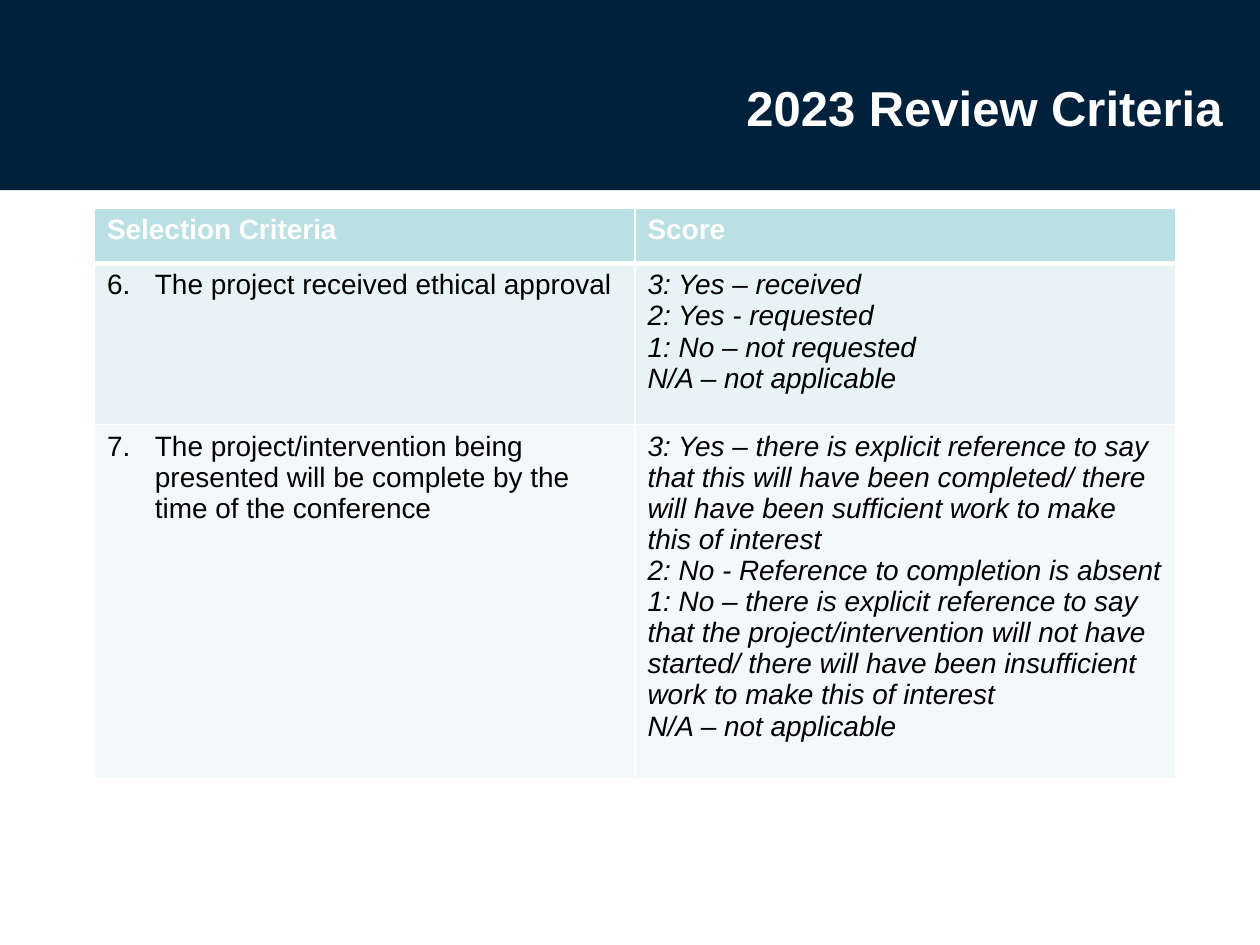
from dataclasses import dataclass

from lxml.etree import SubElement
from pptx import Presentation
from pptx.dml.color import RGBColor
from pptx.enum.shapes import MSO_SHAPE
from pptx.enum.text import MSO_ANCHOR, PP_ALIGN
from pptx.oxml.ns import qn
from pptx.util import Inches, Pt


@dataclass(frozen=True)
class Theme:
    font: str = "Arial"
    navy: str = "00213B"
    white: str = "FFFFFF"
    black: str = "000000"
    header_fill: str = "BBE0E3"
    row_fills: tuple = ("E7F3F4", "F3F9FA")
    title_size: int = 28
    table_size: int = 16
    border_width: int = 1
    header_border_width: int = 3


THEME = Theme()
HEADERS = ("Selection Criteria", "Score")
FIRST_NUMBER = 6
ROW_HEIGHTS = (0.44, 1.28, 2.81)
CRITERIA = (
    (
        "The project received ethical approval",
        (
            "3: Yes – received",
            "2: Yes - requested",
            "1: No – not requested",
            "N/A – not applicable",
        ),
    ),
    (
        "The project/intervention being presented will be complete by the "
        "time of the conference",
        (
            "3: Yes – there is explicit reference to say that this will have been "
            "completed/ there will have been sufficient work to make this of interest",
            "2: No - Reference to completion is absent",
            "1: No – there is explicit reference to say that the project/intervention "
            "will not have started/ there will have been insufficient work to make "
            "this of interest",
            "N/A – not applicable",
        ),
    ),
)


def add_run(paragraph, text, size, color, bold=False, italic=False):
    run = paragraph.add_run()
    run.text = text
    run.font.name = THEME.font
    run.font.size = Pt(size)
    run.font.bold = bold
    run.font.italic = italic
    run.font.color.rgb = RGBColor.from_string(color)


def add_banner(slide, width):
    banner = slide.shapes.add_shape(MSO_SHAPE.RECTANGLE, 0, 0, width, Inches(1.51))
    banner.shadow.inherit = False
    banner.fill.solid()
    banner.fill.fore_color.rgb = RGBColor.from_string(THEME.navy)
    banner.line.fill.background()


def add_title(slide, text):
    box = slide.shapes.add_textbox(Inches(1.3), Inches(0.04), Inches(8.5), Inches(1.61))
    frame = box.text_frame
    frame.word_wrap = True
    frame.vertical_anchor = MSO_ANCHOR.MIDDLE
    paragraph = frame.paragraphs[0]
    paragraph.alignment = PP_ALIGN.RIGHT
    add_run(paragraph, text, THEME.title_size, THEME.white, bold=True)


def add_border(cell, side, width):
    properties = cell._tc.get_or_add_tcPr()
    line = SubElement(properties, qn(f"a:ln{side}"), w=str(Pt(width)))
    fill = SubElement(line, qn("a:solidFill"))
    SubElement(fill, qn("a:srgbClr"), val=THEME.white)


def style_cell(cell, fill, top=THEME.border_width, bottom=THEME.border_width):
    widths = {"L": THEME.border_width, "R": THEME.border_width, "T": top, "B": bottom}
    for side, width in widths.items():
        add_border(cell, side, width)
    cell.fill.solid()
    cell.fill.fore_color.rgb = RGBColor.from_string(fill)


def number_paragraph(paragraph, number):
    properties = paragraph._p.get_or_add_pPr()
    indent = Inches(0.38)
    properties.set("marL", str(indent))
    properties.set("indent", str(-indent))
    SubElement(properties, qn("a:buFont"), typeface=THEME.font)
    SubElement(properties, qn("a:buAutoNum"), type="arabicPeriod", startAt=str(number))


def fill_header(cell, text):
    style_cell(cell, THEME.header_fill, bottom=THEME.header_border_width)
    paragraph = cell.text_frame.paragraphs[0]
    add_run(paragraph, text, THEME.table_size, THEME.white, bold=True)


def fill_criterion(cell, text, number):
    paragraph = cell.text_frame.paragraphs[0]
    number_paragraph(paragraph, number)
    add_run(paragraph, text, THEME.table_size, THEME.black)


def fill_scores(cell, scores):
    frame = cell.text_frame
    for index, score in enumerate(scores):
        paragraph = frame.add_paragraph() if index else frame.paragraphs[0]
        add_run(paragraph, score, THEME.table_size, THEME.black, italic=True)


def add_criteria_table(slide):
    table = slide.shapes.add_table(
        len(ROW_HEIGHTS), len(HEADERS),
        Inches(0.75), Inches(1.65), Inches(8.58), Inches(sum(ROW_HEIGHTS)),
    ).table
    table.horz_banding = False
    for row, height in zip(table.rows, ROW_HEIGHTS):
        row.height = Inches(height)
    for column, header in enumerate(HEADERS):
        fill_header(table.cell(0, column), header)
    for index, (criterion, scores) in enumerate(CRITERIA):
        row = index + 1
        top = THEME.border_width if index else THEME.header_border_width
        for column in range(len(HEADERS)):
            style_cell(table.cell(row, column), THEME.row_fills[index], top=top)
        fill_criterion(table.cell(row, 0), criterion, FIRST_NUMBER + index)
        fill_scores(table.cell(row, 1), scores)


def main():
    presentation = Presentation()
    presentation.slide_width = Inches(10)
    presentation.slide_height = Inches(7.5)
    slide = presentation.slides.add_slide(presentation.slide_layouts[6])
    add_banner(slide, presentation.slide_width)
    add_title(slide, "2023 Review Criteria")
    add_criteria_table(slide)
    presentation.save("out.pptx")


if __name__ == "__main__":
    main()
